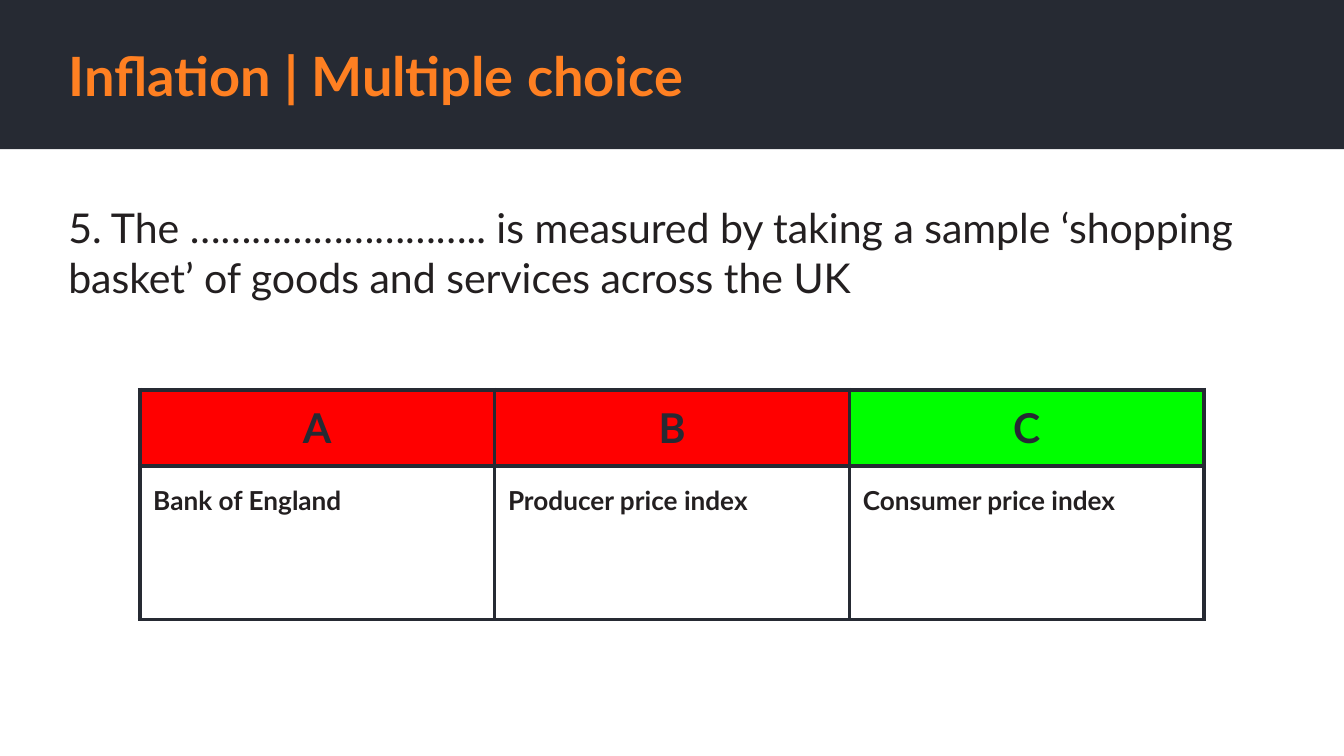
from dataclasses import dataclass

from lxml.etree import SubElement
from pptx import Presentation
from pptx.dml.color import RGBColor
from pptx.enum.shapes import MSO_SHAPE as Preset
from pptx.enum.text import MSO_ANCHOR as Anchor, PP_ALIGN as Align
from pptx.oxml.ns import qn
from pptx.table import _Cell as Cell
from pptx.text.text import TextFrame
from pptx.util import Inches, Pt

SLATE = RGBColor(0x26, 0x2A, 0x33)
ORANGE = RGBColor(0xFF, 0x80, 0x22)
INK = RGBColor(0x23, 0x1F, 0x20)
RED = RGBColor(0xFF, 0x00, 0x00)
GREEN = RGBColor(0x00, 0xFF, 0x00)

SLIDE_WIDTH = Inches(10)
SLIDE_HEIGHT = SLIDE_WIDTH * 9 // 16
MARGIN = Inches(0.1)
INSETS = {side: MARGIN for side in
          ("margin_left", "margin_right", "margin_top", "margin_bottom")}
BORDER_WIDTH = Pt(2.25)


@dataclass
class Choice:
    letter: str
    answer: str
    fill: RGBColor


@dataclass
class TextStyle:
    color: RGBColor
    font: dict
    paragraph: dict


TITLE_STYLE = TextStyle(ORANGE, {"name": "Lato", "size": Pt(29), "bold": True},
                        {"alignment": Align.LEFT, "line_spacing": 1.0})
QUESTION_STYLE = TextStyle(INK, {"name": "Lato", "size": Pt(22), "bold": False},
                           {"alignment": Align.LEFT})
LETTER_STYLE = TextStyle(SLATE, {"name": "Lato", "size": Pt(22), "bold": True},
                         {"alignment": Align.CENTER})
ANSWER_STYLE = TextStyle(INK, {"name": "Lato", "size": Pt(14), "bold": True},
                         {"alignment": Align.LEFT, "line_spacing": 1.15})

CHOICES = [
    Choice("A", "Bank of England", RED),
    Choice("B", "Producer price index", RED),
    Choice("C", "Consumer price index", GREEN),
]


def apply(target: object, values: dict) -> None:
    for attribute, value in values.items():
        setattr(target, attribute, value)


def write(frame: TextFrame, text: str, style: TextStyle) -> None:
    frame.text = text
    paragraph = frame.paragraphs[0]
    apply(paragraph, style.paragraph)
    font = paragraph.runs[0].font
    apply(font, style.font)
    font.color.rgb = style.color


def add_borders(cell: Cell) -> None:
    properties = cell._tc.get_or_add_tcPr()
    for side in ("a:lnL", "a:lnR", "a:lnT", "a:lnB"):
        line = SubElement(properties, qn(side), w=str(BORDER_WIDTH))
        fill = SubElement(line, qn("a:solidFill"))
        SubElement(fill, qn("a:srgbClr"), val=str(SLATE))


def fill_cell(cell: Cell, text: str, style: TextStyle,
              color: RGBColor | None = None) -> None:
    apply(cell, INSETS)
    write(cell.text_frame, text, style)
    add_borders(cell)
    if color is None:
        cell.fill.background()
    else:
        cell.fill.solid()
        cell.fill.fore_color.rgb = color


def main() -> None:
    deck = Presentation()
    apply(deck, {"slide_width": SLIDE_WIDTH, "slide_height": SLIDE_HEIGHT})
    slide = deck.slides.add_slide(deck.slide_layouts[5])

    band = slide.shapes.add_shape(Preset.RECTANGLE, 0, 0, SLIDE_WIDTH, Inches(1.11))
    band.shadow.inherit = False
    band.fill.solid()
    band.fill.fore_color.rgb = SLATE
    band.line.fill.background()
    slide.shapes._spTree.insert(2, band._element)

    title = slide.shapes.title
    apply(title, {"left": Inches(0.41), "top": Inches(0.28),
                  "width": Inches(8.74), "height": Inches(0.56)})
    apply(title.text_frame, INSETS | {"vertical_anchor": Anchor.MIDDLE, "word_wrap": True})
    write(title.text_frame, "Inflation | Multiple choice", TITLE_STYLE)

    answers = slide.shapes.add_table(2, len(CHOICES), Inches(1.04), Inches(2.9),
                                     Inches(2.64 * len(CHOICES)), Inches(1.71)).table
    for row, height in zip(answers.rows, (0.57, 1.14)):
        row.height = Inches(height)
    for column, choice in enumerate(CHOICES):
        fill_cell(answers.cell(0, column), choice.letter, LETTER_STYLE, choice.fill)
        fill_cell(answers.cell(1, column), choice.answer, ANSWER_STYLE)

    question = slide.shapes.add_textbox(Inches(0.41), Inches(1.41), Inches(9.07), Inches(1.68))
    apply(question.text_frame, INSETS | {"vertical_anchor": Anchor.TOP, "word_wrap": True})
    write(question.text_frame,
          "5. The ……………………….. is measured by taking a sample ‘shopping basket’ "
          "of goods and services across the UK", QUESTION_STYLE)

    deck.save("out.pptx")


if __name__ == "__main__":
    main()
